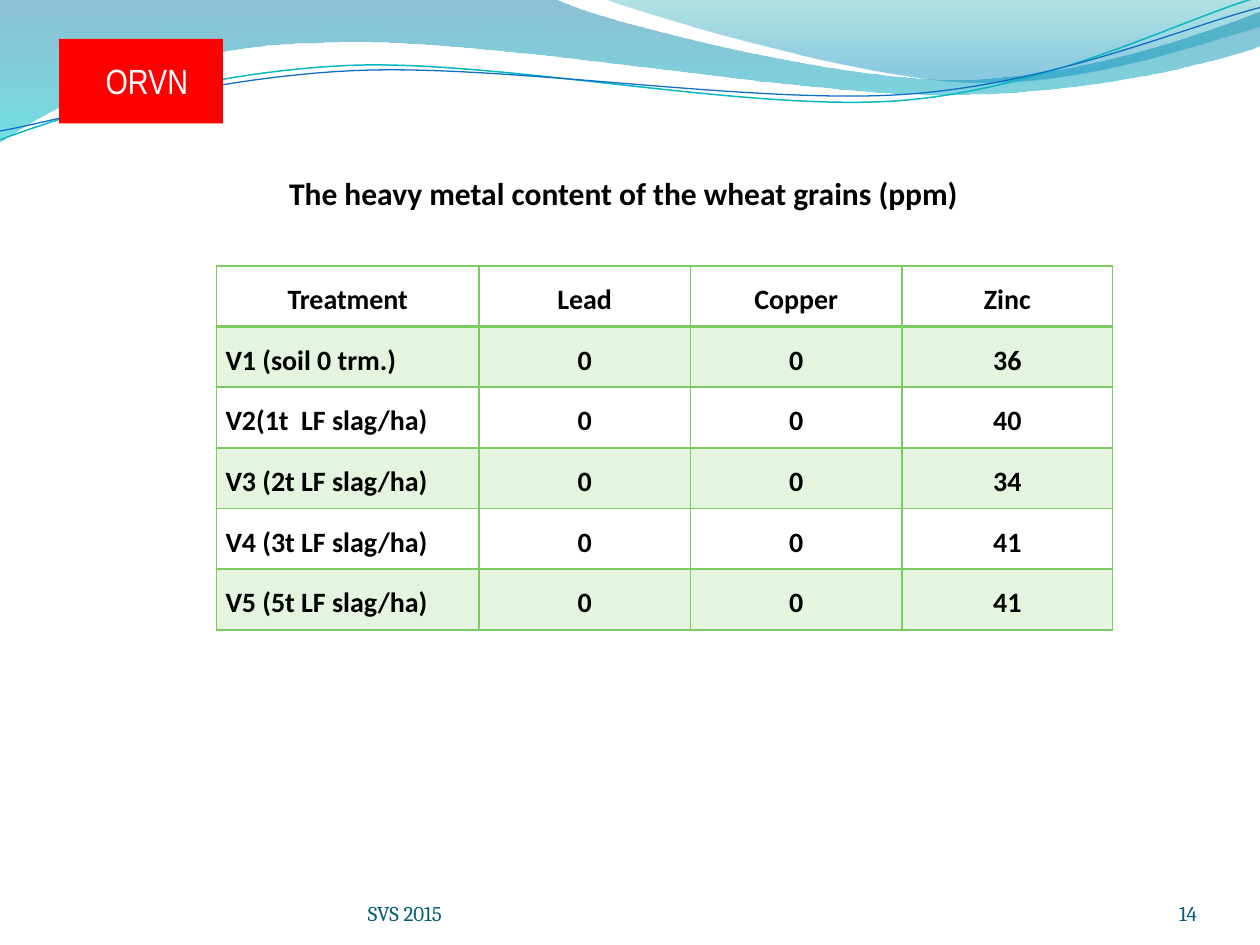
"""Build the slide on heavy metal content of wheat grains."""
from lxml import etree
from pptx import Presentation
from pptx import util as u
from pptx.dml.color import RGBColor
from pptx.enum import shapes, text
from pptx.oxml import ns

Inches, Pt = u.Inches, u.Pt
COLORS = {
    "ink": "000000", "white": "FFFFFF", "grid": "7CCA62", "footer": "045D75", "badge": "FF0000",
    "deep": "0074A1", "aqua": "00C6CF", "teal": "00A1A9", "sky": "008BBF",
    "teal_line": "0AB8BF", "blue_line": "0F6FC6",
}
WAVES = [
    {"start": (0, -0.01), "stops": [(0, "deep", 45), (1, "aqua", 55)],
     "steps": [(4.4, -0.01), (4.76, 0.17, 6.64, 0.63, 7.58, 0.63),
               (8.53, 0.63, 9.58, 0.26, 10, 0.09), (10.01, 0.36),
               (9.83, 0.44, 8.7, 0.76, 7.46, 0.75), (6.22, 0.75, 3.82, 0.28, 2.57, 0.34),
               (1.29, 0.35, 0.46, 0.83, -0.01, 1.13)]},
    {"start": (4.79, -0.01), "stops": [(0, "teal", 30), (0.8, "sky", 45)],
     "steps": [(5.09, 0.11, 6.82, 0.62, 7.69, 0.65), (8.56, 0.69, 9.61, 0.32, 10, 0.21), (10, 0)]},
    {"start": (0, 1.11), "line": ("teal_line", 0.85),
     "steps": [(0.48, 0.93, 1.58, 0.57, 2.77, 0.52), (3.95, 0.47, 5.93, 0.89, 7.13, 0.8),
               (8.33, 0.71, 9.38, 0.15, 9.98, -0.02)]},
    {"start": (0, 1.04), "line": ("blue_line", 0.75),
     "steps": [(0.47, 0.96, 1.64, 0.61, 2.83, 0.56), (4.03, 0.51, 5.97, 0.83, 7.17, 0.75),
               (8.36, 0.67, 9.41, 0.21, 10, 0.06)]},
]
CONTENT = [
    ("Treatment", "Lead", "Copper", "Zinc"),
    ("V1 (soil 0 trm.)", "0", "0", "36"),
    ("V2(1t  LF slag/ha)", "0", "0", "40"),
    ("V3 (2t LF slag/ha)", "0", "0", "34"),
    ("V4 (3t LF slag/ha)", "0", "0", "41"),
    ("V5 (5t LF slag/ha)", "0", "0", "41"),
]
LEFT, CENTER, RIGHT = text.PP_ALIGN.LEFT, text.PP_ALIGN.CENTER, text.PP_ALIGN.RIGHT
TOP, BOTTOM = text.MSO_ANCHOR.TOP, text.MSO_ANCHOR.BOTTOM


def write(frame, words, size, font, color, align, bold=False):
    frame.text = words
    paragraph = frame.paragraphs[0]
    paragraph.alignment = align
    style = paragraph.runs[0].font
    style.size, style.name, style.bold = Pt(size), font, bold
    style.color.rgb = RGBColor.from_string(COLORS[color])
    return paragraph


def set_opacity(parent, percent):
    for color in parent.iter(ns.qn("a:srgbClr")):
        etree.SubElement(color, ns.qn("a:alpha"), val=str(percent * 1000))


prs = Presentation()
prs.slide_width, prs.slide_height = Inches(10), Inches(7.5)
slide = prs.slides.add_slide(prs.slide_layouts[6])

for wave in WAVES:
    points = [(Inches(x), Inches(y)) for step in wave["steps"] for x, y in zip(step[::2], step[1::2])]
    outline = slide.shapes.build_freeform(*[Inches(value) for value in wave["start"]])
    outline.add_line_segments(points, close="stops" in wave)
    ribbon = outline.convert_to_shape()
    ribbon.shadow.inherit = False
    segments = ribbon._element.findall(f".//{ns.qn('a:lnTo')}")
    for step in wave["steps"]:
        if len(step) == 2:
            segments.pop(0)
            continue
        bend, segments = segments[:3], segments[3:]
        curve = etree.Element(ns.qn("a:cubicBezTo"))
        bend[0].addprevious(curve)
        for segment in bend:
            curve.append(segment[0])
            segment.getparent().remove(segment)
    if "stops" in wave:
        ribbon.line.fill.background()
        ribbon.fill.gradient()
        ribbon.fill.gradient_angle = 270
        stop_nodes = ribbon._element.spPr.iter(ns.qn("a:gs"))
        for stop, node, (position, color, opacity) in zip(ribbon.fill.gradient_stops, stop_nodes, wave["stops"]):
            stop.position = position
            stop.color.rgb = RGBColor.from_string(COLORS[color])
            set_opacity(node, opacity)
    else:
        color, width = wave["line"]
        ribbon.fill.background()
        ribbon.line.color.rgb = RGBColor.from_string(COLORS[color])
        ribbon.line.width = Pt(width)

badge = slide.shapes.add_shape(shapes.MSO_SHAPE.RECTANGLE, Inches(0.47), Inches(0.31), Inches(1.3), Inches(0.67))
badge.shadow.inherit = False
badge.fill.solid()
badge.fill.fore_color.rgb = RGBColor.from_string(COLORS["badge"])
badge.line.fill.background()

title = slide.shapes.add_textbox(Inches(0.7), Inches(1.33), Inches(8.5), Inches(0.55)).text_frame
title.word_wrap = True
heading = write(title, "The heavy metal content of the wheat grains (ppm)", 18, "Calibri", "ink", CENTER, True)
heading.space_before = Pt(3.6)

metals = slide.shapes.add_table(
    len(CONTENT), len(CONTENT[0]), Inches(1.72), Inches(2.11), Inches(7.11), Inches(2.89)).table
metals.first_row = metals.horz_banding = False
for column, width in zip(metals.columns, (2.08, 1.68, 1.68, 1.67)):
    column.width = Inches(width)
for r, record in enumerate(CONTENT):
    for c, value in enumerate(record):
        cell = metals.cell(r, c)
        cell.margin_left = cell.margin_right = Inches(0.07)
        cell.margin_top = cell.margin_bottom = 0
        align = LEFT if r and c == 0 else CENTER
        write(cell.text_frame, value, 16, "Calibri", "ink", align, True).line_spacing = 1.5
        properties = cell._tc.get_or_add_tcPr()
        if r % 2:
            cell.fill.solid()
            cell.fill.fore_color.rgb = RGBColor.from_string(COLORS["grid"])
            set_opacity(properties, 20)
        else:
            cell.fill.background()
        for place, side in enumerate("LRTB"):
            weight = 2 if (r, side) in ((0, "B"), (1, "T")) else 1
            border = etree.Element(ns.qn(f"a:ln{side}"), w=str(Pt(weight)))
            paint = etree.SubElement(border, ns.qn("a:solidFill"))
            etree.SubElement(paint, ns.qn("a:srgbClr"), val=COLORS["grid"])
            properties.insert(place, border)

LABELS = [
    ("ORVN", (0.69, 0.47, 0.95, 0.31), TOP, (20, "Arial Narrow", "white", CENTER)),
    ("14", (8.67, 6.95, 0.83, 0.4), BOTTOM, (12, "Cambria", "footer", RIGHT)),
    ("SVS 2015", (2.92, 6.95, 3.67, 0.4), BOTTOM, (12, "Cambria", "footer", LEFT)),
]
for words, bounds, anchor, style in LABELS:
    label = slide.shapes.add_textbox(*[Inches(value) for value in bounds]).text_frame
    label.word_wrap = True
    label.margin_left = label.margin_right = label.margin_top = label.margin_bottom = 0
    label.vertical_anchor = anchor
    write(label, words, *style)

prs.save("out.pptx")
